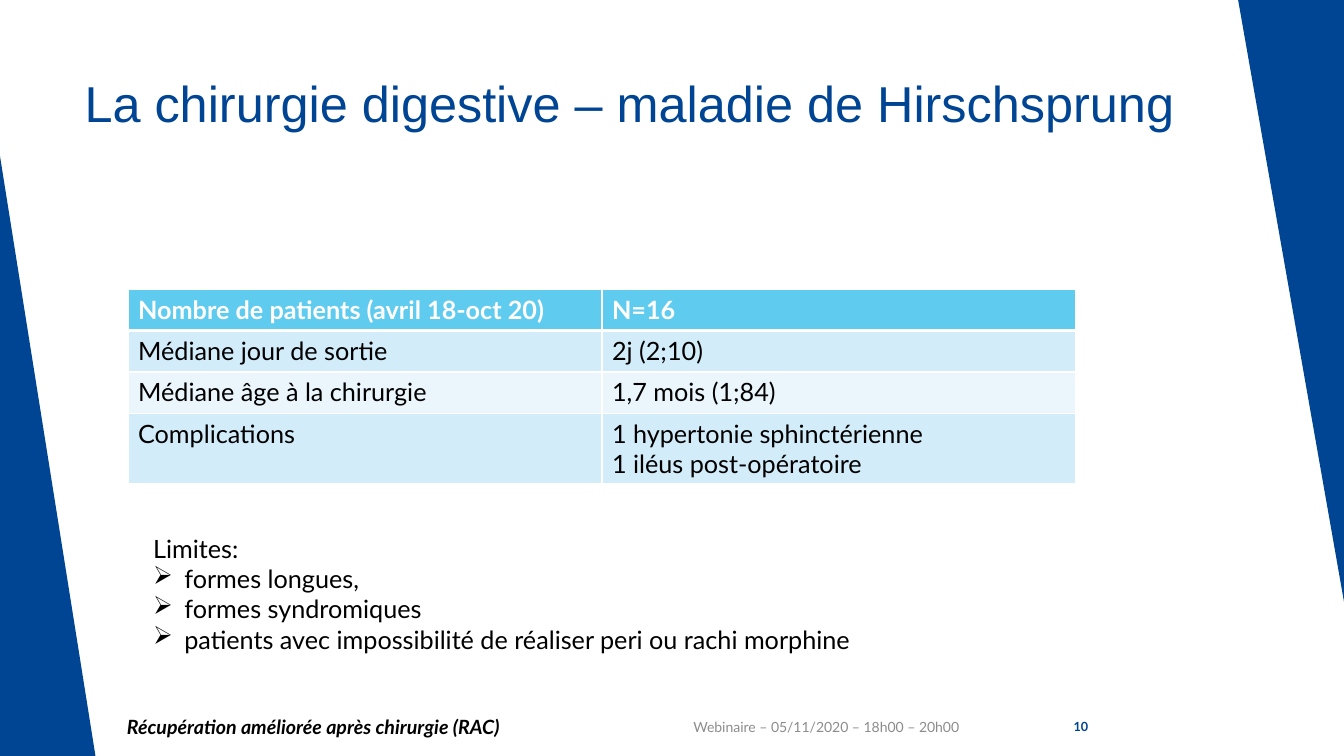
import lxml.etree
import pptx
import pptx.dml.color
import pptx.enum.shapes
import pptx.enum.text
import pptx.oxml.ns
import pptx.util

Inches = pptx.util.Inches
Pt = pptx.util.Pt
ALIGN = pptx.enum.text.PP_ALIGN
ANCHOR = pptx.enum.text.MSO_ANCHOR

COLORS = {
    "navy": "004494",
    "header": "5FCBEF",
    "band_dark": "D2ECF9",
    "band_light": "EAF6FC",
    "white": "FFFFFF",
    "black": "000000",
    "grey": "8C8C8C",
}
ROWS = [
    ("Nombre de patients (avril 18-oct 20)", "N=16"),
    ("Médiane jour de sortie", "2j (2;10)"),
    ("Médiane âge à la chirurgie", "1,7 mois (1;84)"),
    ("Complications", "1 hypertonie sphinctérienne\n1 iléus post-opératoire"),
]
LIMITS = [
    "formes longues,",
    "formes syndromiques",
    "patients avec impossibilité de réaliser peri ou rachi morphine",
]


def rgb(name):
    return pptx.dml.color.RGBColor.from_string(COLORS[name])


def add_element(parent, tag, **attributes):
    element = lxml.etree.SubElement(parent, pptx.oxml.ns.qn(tag))
    for key, value in attributes.items():
        element.set(key, str(value))
    return element


def add_run(paragraph, text, size, color, font="Lato", bold=False, italic=False):
    run = paragraph.add_run()
    run.text = text
    run.font.name = font
    run.font.size = Pt(size)
    run.font.bold = bold
    run.font.italic = italic
    run.font.color.rgb = rgb(color)


def add_text_frame(slide, box, anchor=ANCHOR.TOP):
    text_frame = slide.shapes.add_textbox(*map(Inches, box)).text_frame
    text_frame.word_wrap = True
    text_frame.vertical_anchor = anchor
    return text_frame


def add_side_triangle(slide, box, rotation=0):
    shape = slide.shapes.add_shape(
        pptx.enum.shapes.MSO_SHAPE.RIGHT_TRIANGLE, *map(Inches, box))
    shape.rotation = rotation
    shape.shadow.inherit = False
    shape.fill.solid()
    shape.fill.fore_color.rgb = rgb("navy")
    shape.line.fill.background()


def add_title(slide, box):
    paragraph = add_text_frame(slide, box).paragraphs[0]
    add_run(paragraph, "La chirurgie digestive – maladie de Hirschsprung",
            36, "navy", font="Arial")


def style_cell(cell, fill, bottom_width):
    properties = cell._tc.get_or_add_tcPr()
    for side, width in (("L", 1), ("R", 1), ("T", 1), ("B", bottom_width)):
        line = add_element(properties, f"a:ln{side}", w=Pt(width))
        add_element(add_element(line, "a:solidFill"), "a:srgbClr", val=COLORS["white"])
    cell.fill.solid()
    cell.fill.fore_color.rgb = rgb(fill)


def add_results_table(slide, box):
    table = slide.shapes.add_table(len(ROWS), 2, *map(Inches, box)).table
    row_height = 0.41
    for row_index, texts in enumerate(ROWS):
        header = row_index == 0
        last = row_index == len(ROWS) - 1
        height = box[3] - row_height * row_index if last else row_height
        table.rows[row_index].height = Inches(height)
        band = "band_dark" if row_index % 2 else "band_light"
        for column_index, text in enumerate(texts):
            cell = table.cell(row_index, column_index)
            style_cell(cell, "header" if header else band, 3 if header else 1)
            for line_index, line in enumerate(text.split("\n")):
                text_frame = cell.text_frame
                paragraph = text_frame.add_paragraph() if line_index else text_frame.paragraphs[0]
                add_run(paragraph, line, 18, "white" if header else "black", bold=header)


def add_limits(slide, box):
    text_frame = add_text_frame(slide, box)
    add_run(text_frame.paragraphs[0], "Limites:", 18, "black")
    indent = Inches(0.31)
    for limit in LIMITS:
        paragraph = text_frame.add_paragraph()
        properties = paragraph._p.get_or_add_pPr()
        properties.set("marL", str(indent))
        properties.set("indent", str(-indent))
        add_element(properties, "a:buChar", char="➢")
        add_run(paragraph, limit, 18, "black")


def add_footer(slide, box):
    left, top, width, height = box
    parts = [
        (0, 5.35, ALIGN.LEFT, "Récupération améliorée après chirurgie (RAC)", 14, "black", True, True),
        (5.56, 2.89, ALIGN.RIGHT, "Webinaire – 05/11/2020 – 18h00 – 20h00", 10, "grey", False, False),
        (width - 0.75, 0.75, ALIGN.RIGHT, "10", 9, "navy", True, False),
    ]
    for offset, part_width, alignment, text, size, color, bold, italic in parts:
        text_frame = add_text_frame(slide, (left + offset, top, part_width, height), ANCHOR.MIDDLE)
        paragraph = text_frame.paragraphs[0]
        paragraph.alignment = alignment
        add_run(paragraph, text, size, color, bold=bold, italic=italic)


def main():
    presentation = pptx.Presentation()
    presentation.slide_width = Inches(13.33)
    presentation.slide_height = Inches(7.5)
    slide = presentation.slides.add_slide(presentation.slide_layouts[6])
    add_side_triangle(slide, (0, 1.55, 0.95, 5.97))
    add_side_triangle(slide, (12.28, 0, 1.05, 5.97), rotation=180)
    add_title(slide, (0.74, 0.67, 11.27, 1.44))
    add_results_table(slide, (1.27, 2.87, 9.4, 1.92))
    add_footer(slide, (1.16, 7.01, 9.73, 0.4))
    add_limits(slide, (1.42, 5.24, 9.09, 1.31))
    presentation.save("out.pptx")


if __name__ == "__main__":
    main()
